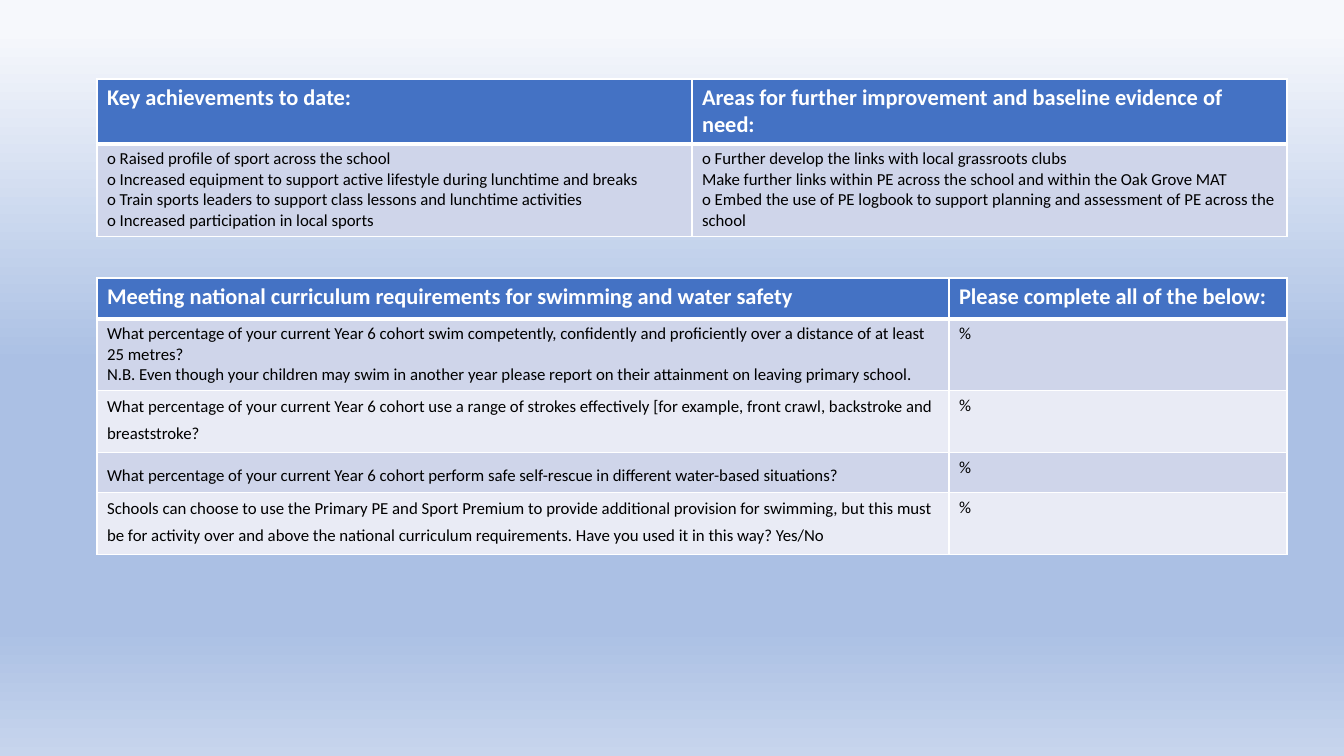
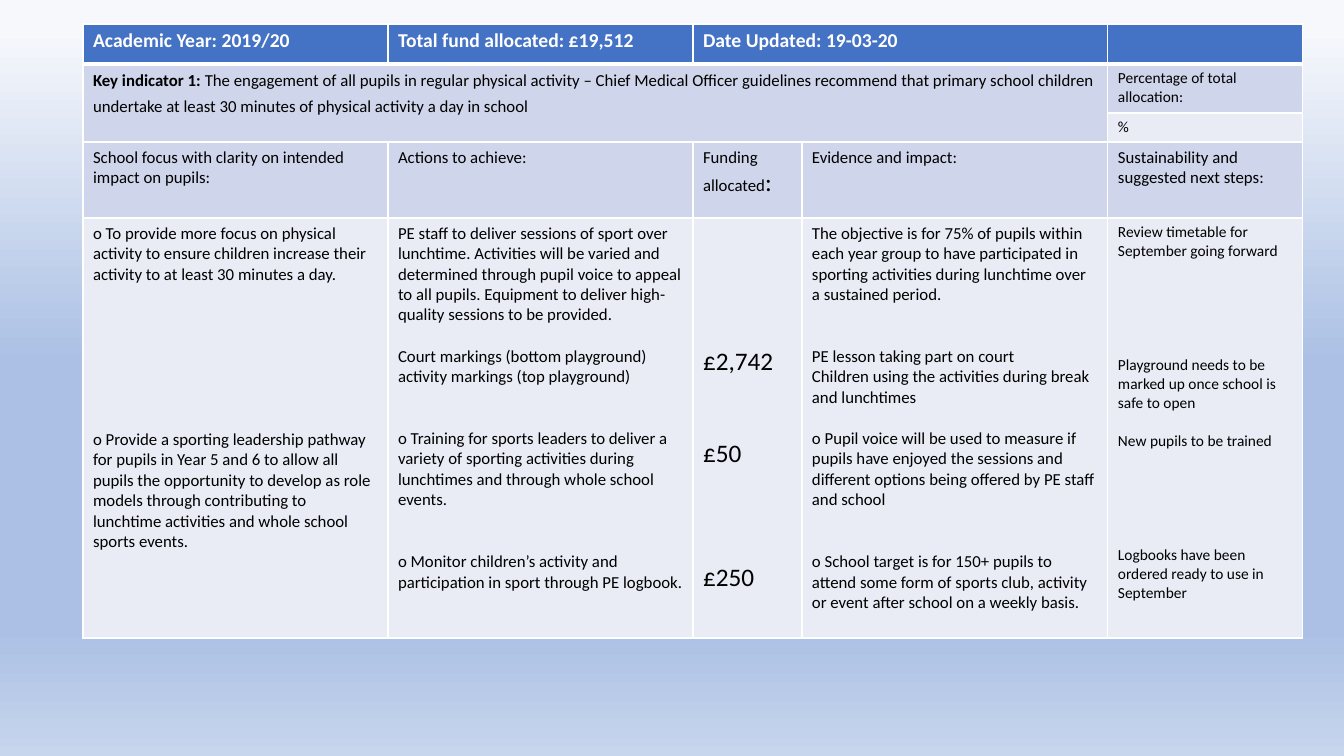
from lxml import etree
from pptx import Presentation
from pptx.dml.color import RGBColor
from pptx.oxml.ns import qn
from pptx.util import Emu, Pt

PX = 12192000 / 1344
FONT = "Calibri"
LINE_HEIGHT = 1.23
LOOSE_LINES = 1.3
COLORS = {
    "header": "4472C4",
    "band": "CFD5EA",
    "light": "E9EBF5",
    "border": "FFFFFF",
    "header_text": "FFFFFF",
    "text": "000000",
}
BACKGROUND_STOPS = [(4, "F6F8FC"), (48, "ABC0E4"), (83, "ABC0E4"), (100, "C7D5ED")]


def add_run(paragraph, text, size, color="text", bold=False):
    run = paragraph.add_run()
    run.text = text
    for key, value in {"name": FONT, "size": Pt(size), "bold": bold}.items():
        setattr(run.font, key, value)
    run.font.color.rgb = RGBColor.from_string(COLORS[color])


def add_grid(slide, left, top, widths, heights, rows, header_size=16, sizes=None):
    """Add a banded table; a paragraph is a text or (blank lines above, text)."""
    frame = slide.shapes.add_table(
        len(heights), len(widths), Emu(round(left * PX)), Emu(round(top * PX)),
        Emu(round(sum(widths) * PX)), Emu(round(sum(heights) * PX)))
    table = frame.table
    table.horz_banding = False
    for column, width in zip(table.columns, widths):
        column.width = Emu(round(width * PX))
    for row, height in zip(table.rows, heights):
        row.height = Emu(round(height * PX))

    for r, contents in enumerate(rows):
        is_header = r == 0
        fill = "header" if is_header else "band" if r % 2 else "light"
        for c, paragraphs in enumerate(contents):
            cell = table.cell(r, c)
            cell.fill.solid()
            cell.fill.fore_color.rgb = RGBColor.from_string(COLORS[fill])
            properties = cell._tc.get_or_add_tcPr()
            for index, side in enumerate(["lnL", "lnR", "lnT", "lnB"]):
                under_header = (r, side) in [(0, "lnB"), (1, "lnT")]
                line = etree.Element(qn(f"a:{side}"), w=str(Pt(3 if under_header else 1)))
                solid = etree.SubElement(line, qn("a:solidFill"))
                etree.SubElement(solid, qn("a:srgbClr"), val=COLORS["border"])
                properties.insert(index, line)

            size = header_size if is_header else (sizes or {}).get((r, c), 12)
            text_frame = cell.text_frame
            end_format = text_frame.paragraphs[0]._p.get_or_add_endParaRPr()
            end_format.set("sz", str(size * 100))
            for number, content in enumerate(paragraphs):
                gap, text = content if isinstance(content, tuple) else (0, content)
                paragraph = text_frame.add_paragraph() if number else text_frame.paragraphs[0]
                if gap:
                    paragraph.space_before = Pt(round(gap * size * LINE_HEIGHT, 1))
                add_run(paragraph, text, size, "header_text" if is_header else "text", is_header)
    return table


prs = Presentation()
prs.slide_width = Emu(round(1344 * PX))
prs.slide_height = Emu(round(756 * PX))

# Shared background
background = prs.slide_master.background.fill
background.gradient()
background.gradient_angle = 270
stop_list = prs.slide_master._element.find(".//" + qn("a:gsLst"))
for stop in list(stop_list):
    stop_list.remove(stop)
for position, color in BACKGROUND_STOPS:
    stop = etree.SubElement(stop_list, qn("a:gs"), pos=str(position * 1000))
    etree.SubElement(stop, qn("a:srgbClr"), val=color)

blank_layout = prs.slide_layouts[6]

# Slide 1: achievements and swimming
review_slide = prs.slides.add_slide(blank_layout)
add_grid(review_slide, 97, 79, [595, 595], [64, 93], [
    [["Key achievements to date:"],
     ["Areas for further improvement and baseline evidence of need:"]],
    [["o Raised profile of sport across the school",
      "o Increased equipment to support active lifestyle during lunchtime and breaks",
      "o Train sports leaders to support class lessons and lunchtime activities",
      "o Increased participation in local sports"],
     ["o Further develop the links with local grassroots clubs",
      "Make further links within PE across the school and within the Oak Grove MAT",
      "o Embed the use of PE logbook to support planning and assessment of PE across "
      "the school"]],
])
swimming = add_grid(review_slide, 97, 278, [852, 338], [41, 71, 62, 40, 62], [
    [["Meeting national curriculum requirements for swimming and water safety"],
     ["Please complete all of the below:"]],
    [["What percentage of your current Year 6 cohort swim competently, confidently and "
      "proficiently over a distance of at least 25 metres?",
      "N.B. Even though your children may swim in another year please report on their "
      "attainment on leaving primary school."], ["%"]],
    [["What percentage of your current Year 6 cohort use a range of strokes effectively "
      "[for example, front crawl, backstroke and breaststroke?"], ["%"]],
    [["What percentage of your current Year 6 cohort perform safe self-rescue in "
      "different water-based situations?"], ["%"]],
    [["Schools can choose to use the Primary PE and Sport Premium to provide additional "
      "provision for swimming, but this must be for activity over and above the national "
      "curriculum requirements. Have you used it in this way? Yes/No"], ["%"]],
])
swimming.cell(3, 0).margin_top = Emu(round(13 * PX))

# Slide 2: spending plan
plan_slide = prs.slides.add_slide(blank_layout)
plan = add_grid(plan_slide, 83, 24, [305, 305, 109, 306, 195], [40, 49, 29, 76, 420], [
    [["Academic Year: 2019/20"], ["Total fund allocated: £19,512"],
     ["Date Updated: 19-03-20"], [], []],
    [["Key indicator 1: "], [], [], [], ["Percentage of total allocation:"]],
    [[], [], [], [], ["%"]],
    [["School focus with clarity on intended impact on pupils:"], ["Actions to achieve:"],
     ["Funding allocated"], ["Evidence and impact:"],
     ["Sustainability and suggested next steps:"]],
    [["o To provide more focus on physical activity to ensure children increase their "
      "activity to at least 30 minutes a day.",
      (7, "o Provide a sporting leadership pathway for pupils in Year 5 and 6 to allow all "
          "pupils the opportunity to develop as role models through contributing to "
          "lunchtime activities and whole school sports events.")],
     ["PE staff to deliver sessions of sport over lunchtime. Activities will be varied and "
      "determined through pupil voice to appeal to all pupils. Equipment to deliver "
      "high-quality sessions to be provided.",
      (1, "Court markings (bottom playground) activity markings (top playground)"),
      (2, "o Training for sports leaders to deliver a variety of sporting activities during "
          "lunchtimes and through whole school events."),
      (2, "o Monitor children’s activity and participation in sport through PE logbook.")],
     ["£2,742", (2, "£50"), (3, "£250")],
     ["The objective is for 75% of pupils within each year group to have participated in "
      "sporting activities during lunchtime over a sustained period.",
      (2, "PE lesson taking part on court"),
      "Children using the activities during break and lunchtimes",
      (1, "o Pupil voice will be used to measure if pupils have enjoyed the sessions and "
          "different options being offered by PE staff and school"),
      (2, "o School target is for 150+ pupils to attend some form of sports club, activity "
          "or event after school on a weekly basis.")],
     ["Review timetable for September going forward",
      (5, "Playground needs to be marked up once school is safe to open"),
      (1, "New pupils to be trained"),
      (5, "Logbooks have been ordered ready to use in September")]],
], header_size=14, sizes={(1, 4): 11, (2, 4): 11, (4, 4): 11, (4, 2): 18})
plan.cell(0, 2).merge(plan.cell(0, 3))
plan.cell(1, 0).merge(plan.cell(2, 3))
plan.cell(4, 2).margin_top = Emu(round(128 * PX))

indicator = plan.cell(1, 0).text_frame.paragraphs[0]
indicator.runs[0].font.bold = True
add_run(indicator, "The engagement of all pupils in regular physical activity – Chief Medical "
        "Officer guidelines recommend that primary school children undertake at least "
        "30 minutes of physical activity a day in school", 12)
add_run(plan.cell(3, 2).text_frame.paragraphs[0], ":", 18)

for cell in [swimming.cell(2, 0), swimming.cell(4, 0), plan.cell(1, 0)]:
    cell.margin_top = 0
    cell.text_frame.paragraphs[0].line_spacing = LOOSE_LINES

prs.save("out.pptx")
